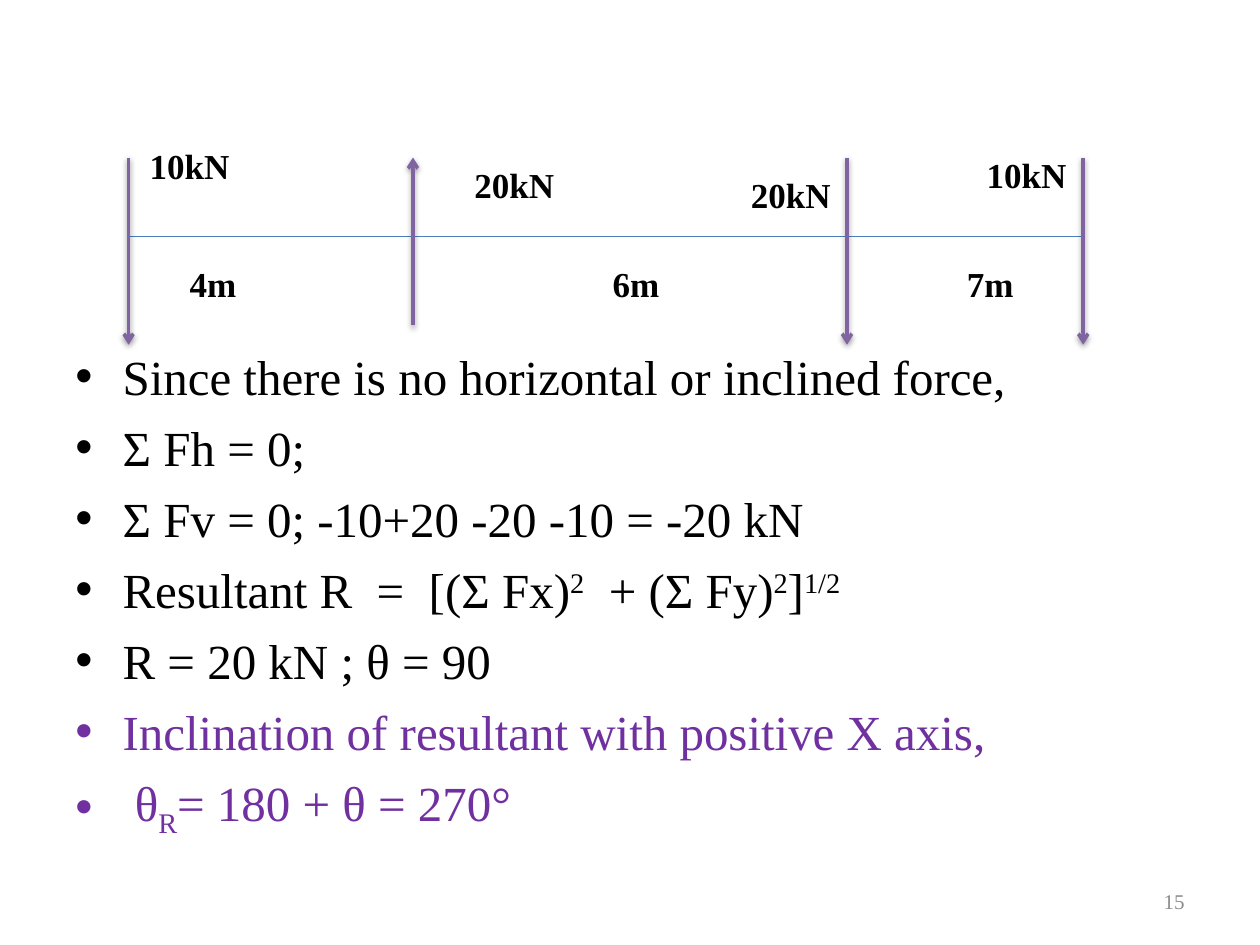
from lxml import etree
from pptx import Presentation, util as u
from pptx.dml.color import RGBColor
from pptx.enum import shapes, text
from pptx.oxml import parse_xml
from pptx.oxml.ns import qn

Pt = u.Pt
FONT = "Times New Roman"
COLORS = {"ink": "000000", "result": "7030A0", "beam": "4B7EBC",
          "force": "8064A2", "number": "8C8C8C"}
SHADOW = parse_xml(
    '<a:outerShdw xmlns:a="http://schemas.openxmlformats.org/drawingml/2006/main" '
    'blurRad="40000" dist="20000" dir="5400000" rotWithShape="0">'
    '<a:srgbClr val="000000"><a:alpha val="38000"/></a:srgbClr></a:outerShdw>')


def add_span(para, words, size, color, bold=False, baseline=0):
    """Add one run; baseline is its raise or drop in percent."""
    span = para.add_run()
    span.text = words
    span.font.name = FONT
    span.font.size = Pt(size)
    span.font.bold = bold
    span.font.color.rgb = RGBColor.from_string(COLORS[color])
    if baseline:
        span.font._element.set("baseline", str(baseline * 1000))


def add_line(start, end, color, width):
    """Add a straight line and return it with its empty effect list."""
    line = slide.shapes.add_connector(
        shapes.MSO_CONNECTOR.STRAIGHT, *(Pt(v) for v in start + end))
    line.line.color.rgb = RGBColor.from_string(COLORS[color])
    line.line.width = Pt(width)
    effects = etree.SubElement(line._element.spPr, qn("a:effectLst"))
    return line, effects


deck = Presentation()
deck.slide_width, deck.slide_height = Pt(720), Pt(540)
slide = deck.slides.add_slide(deck.slide_layouts[6])

# Working: each line is a colour and its (words, baseline) spans
working = [
    ("ink", [("Since there is no horizontal or inclined force,", 0)]),
    ("ink", [("Σ Fh = 0;", 0)]),
    ("ink", [("Σ Fv = 0; -10+20 -20 -10 = -20 kN", 0)]),
    ("ink", [("Resultant R  =  [(Σ Fx)", 0), ("2", 30), ("  + (Σ Fy)", 0),
             ("2", 30), ("]", 0), ("1/2", 30)]),
    ("ink", [("R = 20 kN ; θ = 90", 0)]),
    ("result", [("Inclination of resultant with positive X axis,", 0)]),
    ("result", [(" θ", 0), ("R", -25), ("= 180 + θ = 270°", 0)]),
]
box = slide.shapes.add_textbox(Pt(36), Pt(194.3), Pt(648), Pt(288))
box.text_frame.word_wrap = True
for index, (color, spans) in enumerate(working):
    para = box.text_frame.paragraphs[0] if index == 0 else box.text_frame.add_paragraph()
    para.alignment = text.PP_ALIGN.JUSTIFY
    para.space_after = Pt(7)
    props = para._p.get_or_add_pPr()
    props.set("marL", str(Pt(27)))
    props.set("indent", str(-Pt(27)))
    etree.SubElement(props, qn("a:buFont")).set("typeface", "Arial")
    etree.SubElement(props, qn("a:buChar")).set("char", "•")
    for words, baseline in spans:
        add_span(para, words, 28, color, baseline=baseline)

# Slide number
box = slide.shapes.add_textbox(Pt(516), Pt(500.5), Pt(168), Pt(28.75))
box.text_frame.word_wrap = True
box.text_frame.vertical_anchor = text.MSO_ANCHOR.MIDDLE
para = box.text_frame.paragraphs[0]
para.alignment = text.PP_ALIGN.RIGHT
add_span(para, "15", 12, "number")

# Beam and the forces on it: x, tail y, head y
add_line((73.5, 135), (619, 135), "beam", 0.75)
for x, tail, head in [(73.5, 90, 197), (236, 186, 90), (484, 90, 197), (619, 90, 197)]:
    force, effects = add_line((x, tail), (x, head), "force", 2)
    effects.append(parse_xml(etree.tostring(SHADOW)))
    etree.SubElement(force.line._get_or_add_ln(), qn("a:tailEnd")).set("type", "arrow")

# Force and distance labels: words, left, top, width
labels = [
    ("10kN", 78.5, 78.75, 60.5), ("20kN", 264, 90, 60.5),
    ("20kN", 422, 95.5, 60.5), ("10kN", 556.75, 84, 60.5),
    ("4m", 101.25, 146.25, 41.5), ("6m", 343, 146.25, 41.5), ("7m", 545.5, 146.25, 41.5),
]
for words, left, top, width in labels:
    box = slide.shapes.add_textbox(Pt(left), Pt(top), Pt(width), Pt(31.5))
    box.text_frame.word_wrap = False
    box.text_frame.auto_size = text.MSO_AUTO_SIZE.SHAPE_TO_FIT_TEXT
    add_span(box.text_frame.paragraphs[0], words, 20, "ink", bold=True)

deck.save("out.pptx")
